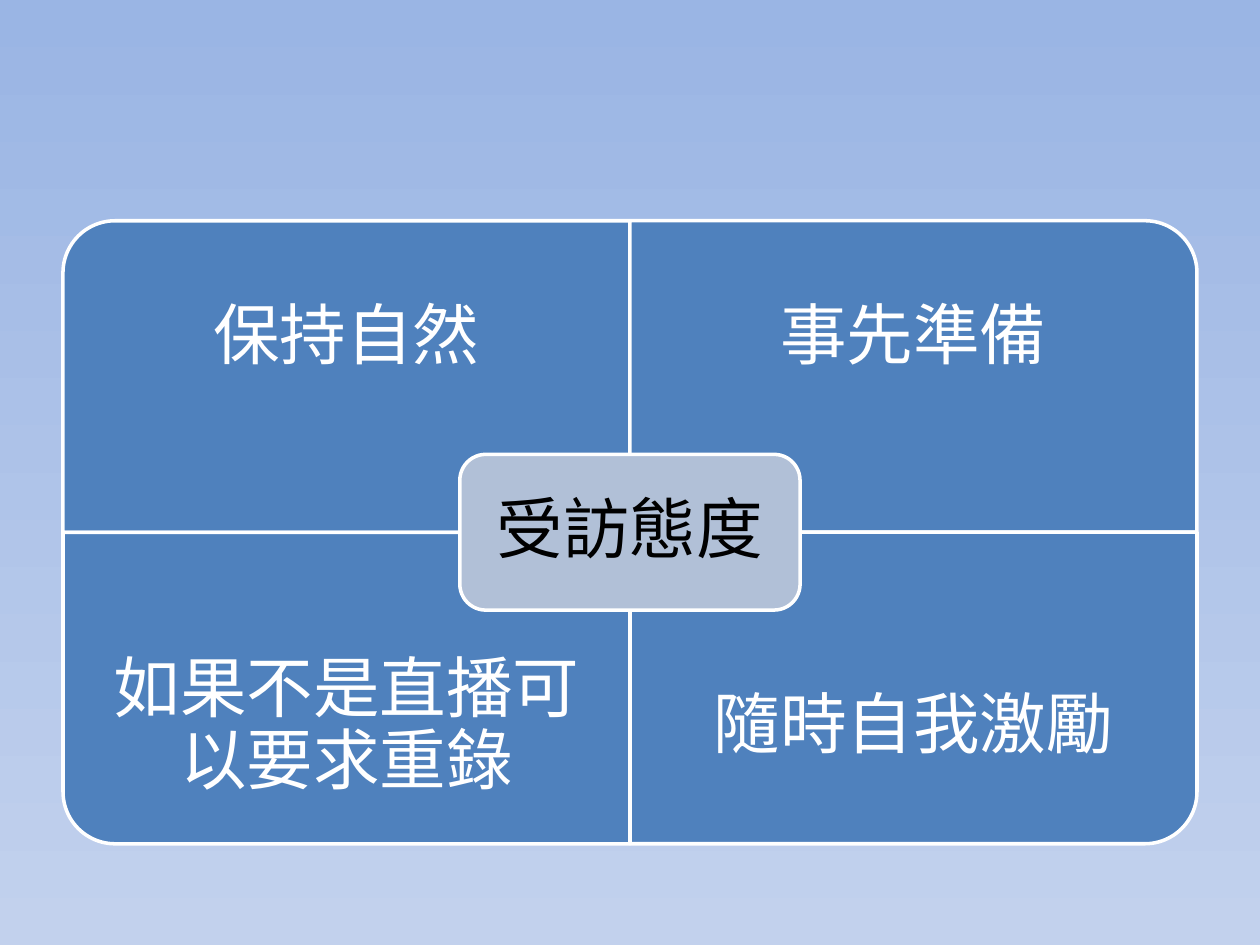
from pptx import Presentation
from pptx.dml.color import RGBColor
from pptx.enum.shapes import MSO_SHAPE
from pptx.enum.text import MSO_ANCHOR, PP_ALIGN
from pptx.util import Cm, Pt

COLORS = {
    "sky_top": "9AB5E4",
    "sky_bottom": "C2D1ED",
    "quadrant": "4F81BD",
    "center": "B1C0D7",
    "white": "FFFFFF",
    "black": "000000",
}


def style_panel(panel, fill):
    panel.shadow.inherit = False
    panel.adjustments[0] = 0.167
    panel.fill.solid()
    panel.fill.fore_color.rgb = RGBColor.from_string(COLORS[fill])
    panel.line.color.rgb = RGBColor.from_string(COLORS["white"])
    panel.line.width = Pt(2)


def write_label(holder, wording, color, inset):
    frame = holder.text_frame
    frame.word_wrap = True
    frame.vertical_anchor = MSO_ANCHOR.MIDDLE
    frame.margin_left = frame.margin_right = Cm(inset)
    frame.margin_top = frame.margin_bottom = Cm(inset)
    paragraph = frame.paragraphs[0]
    paragraph.alignment = PP_ALIGN.CENTER
    paragraph.line_spacing = 0.9
    run = paragraph.add_run()
    run.text = wording
    run.font.name = "Calibri"
    run.font.size = Pt(38)
    run.font.color.rgb = RGBColor.from_string(COLORS[color])


prs = Presentation()
prs.slide_width, prs.slide_height = Cm(25.4), Cm(19.05)
slide = prs.slides.add_slide(prs.slide_layouts[6])

# Background fading downwards
sky = slide.background.fill
sky.gradient()
sky.gradient_angle = 270
for stop, position, name in zip(sky.gradient_stops, (0, 1), ("sky_top", "sky_bottom")):
    stop.position = position
    stop.color.rgb = RGBColor.from_string(COLORS[name])

# Four quadrants around a common centre, each with its round corner outwards
matrix = slide.shapes.add_group_shape().shapes
center_x, center_y = 12.7, 10.73
quad_w, quad_h = 11.43, 6.28
label_h = 4.72
quadrants = [
    ("保持自然", 0, 0, 270),
    ("事先準備", 1, 0, 0),
    ("如果不是直播可以要求重錄", 0, 1, 180),
    ("隨時自我激勵", 1, 1, 90),
]
for wording, col, row, rotation in quadrants:
    left = center_x + (col - 1) * quad_w
    top = center_y + (row - 1) * quad_h
    # A quarter turn swaps width and height about the same middle
    w, h = (quad_h, quad_w) if rotation in (90, 270) else (quad_w, quad_h)
    quadrant = matrix.add_shape(
        MSO_SHAPE.ROUND_1_RECTANGLE,
        Cm(left + (quad_w - w) / 2), Cm(top + (quad_h - h) / 2), Cm(w), Cm(h))
    quadrant.rotation = rotation
    style_panel(quadrant, "quadrant")

    # Labels stay upright and keep to the outer edge
    label_top = top + row * (quad_h - label_h)
    label = matrix.add_textbox(Cm(left), Cm(label_top), Cm(quad_w), Cm(label_h))
    write_label(label, wording, "white", 0.75)

# Central topic
topic_w, topic_h = 6.86, 3.14
topic = matrix.add_shape(
    MSO_SHAPE.ROUNDED_RECTANGLE,
    Cm(center_x - topic_w / 2), Cm(center_y - topic_h / 2), Cm(topic_w), Cm(topic_h))
style_panel(topic, "center")
write_label(topic, "受訪態度", "black", 0.41)

prs.save("out.pptx")
